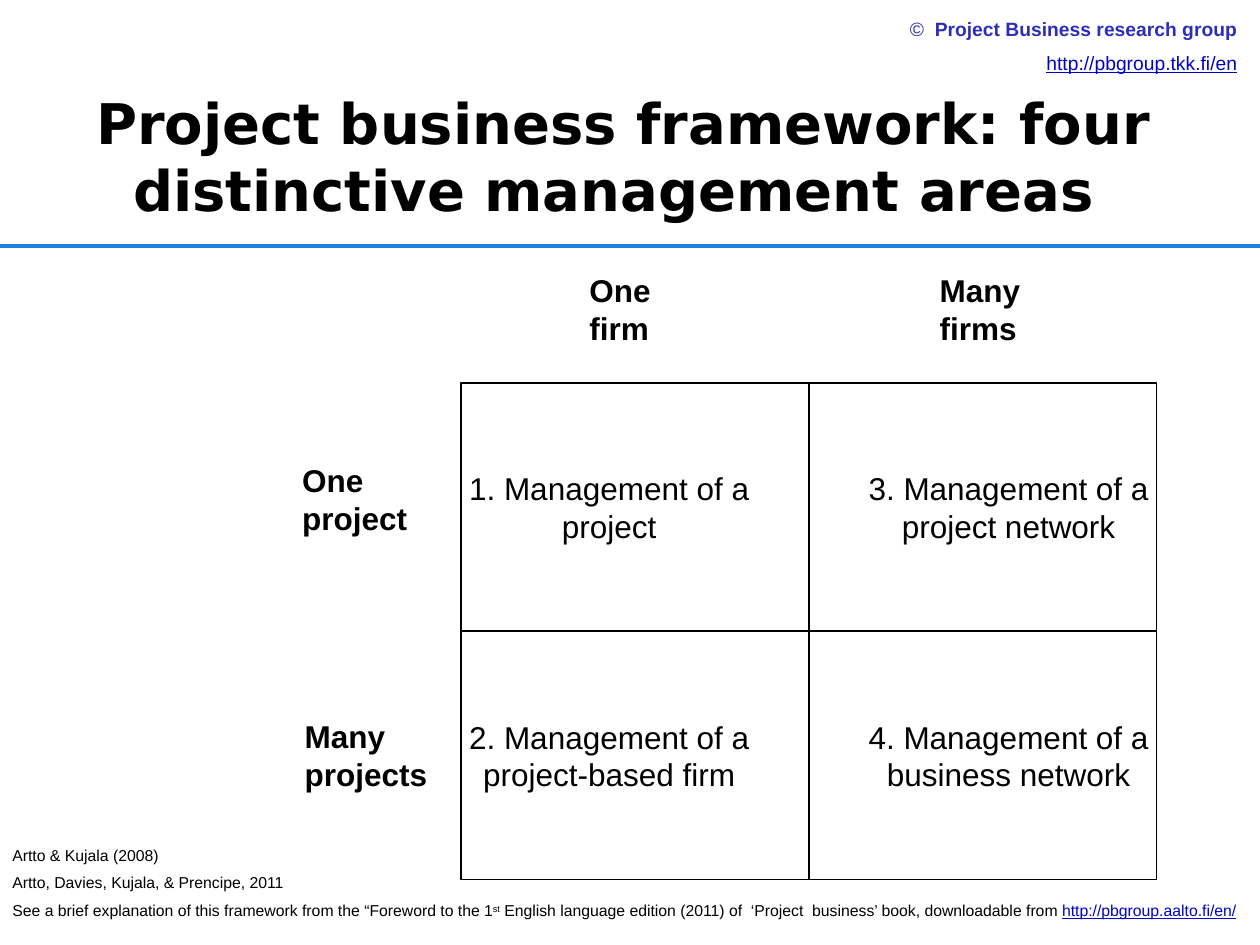
import pptx
import pptx.dml.color
import pptx.enum.shapes
import pptx.enum.text
import pptx.oxml.ns
import pptx.util
from dataclasses import dataclass
from lxml import etree
from typing import Any

Inches = pptx.util.Inches
Pt = pptx.util.Pt
RGB = pptx.dml.color.RGBColor
ALIGN = pptx.enum.text.PP_ALIGN
ANCHOR = pptx.enum.text.MSO_ANCHOR
FIT = pptx.enum.text.MSO_AUTO_SIZE


@dataclass(frozen=True)
class Theme:
    black: RGB = RGB(0x00, 0x00, 0x00)
    rule: RGB = RGB(0x1D, 0x82, 0xDD)
    owner: RGB = RGB(0x2D, 0x2D, 0xB9)
    link: RGB = RGB(0x00, 0x00, 0xCC)
    body_font: str = "Arial"
    title_font: str = "DejaVu Sans"
    title: Pt = Pt(32)
    label: Pt = Pt(18)
    header: Pt = Pt(11)
    source: Pt = Pt(9)


THEME = Theme()


@dataclass(frozen=True)
class Piece:
    text: str
    color: RGB = THEME.black
    bold: bool = False
    underline: bool = False
    superscript: bool = False


@dataclass(frozen=True)
class TextBlock:
    left: float
    top: float
    width: float
    height: float
    paragraphs: list[list[Piece]]
    size: Pt
    font: str = THEME.body_font
    align: Any = ALIGN.LEFT
    anchor: Any = ANCHOR.TOP
    fit: Any = FIT.SHAPE_TO_FIT_TEXT
    gap: float = 0


@dataclass(frozen=True)
class Area:
    column: int
    row: int
    text: str


def set_all(target: Any, values: dict[str, Any]) -> None:
    for name, value in values.items():
        setattr(target, name, value)


def write(frame: Any, block: TextBlock) -> None:
    set_all(frame, {"word_wrap": True, "auto_size": block.fit, "vertical_anchor": block.anchor})
    for index, pieces in enumerate(block.paragraphs):
        paragraph = frame.add_paragraph() if index else frame.paragraphs[0]
        set_all(paragraph, {"alignment": block.align, "space_before": Pt(block.gap if index else 0)})
        for piece in pieces:
            run = paragraph.add_run()
            run.text = piece.text
            set_all(run.font, {"name": block.font, "size": block.size,
                               "bold": piece.bold, "underline": piece.underline})
            run.font.color.rgb = piece.color
            if piece.superscript:
                run.font._element.set("baseline", "30000")


def add_text(slide: Any, block: TextBlock) -> None:
    box = slide.shapes.add_textbox(Inches(block.left), Inches(block.top),
                                   Inches(block.width), Inches(block.height))
    write(box.text_frame, block)


def add_rule(slide: Any, top: float, width: float) -> None:
    rule = slide.shapes.add_connector(pptx.enum.shapes.MSO_CONNECTOR.STRAIGHT,
                                      Inches(0), Inches(top), Inches(width), Inches(top))
    rule.line.color.rgb = THEME.rule
    rule.line.width = Pt(2.25)
    etree.SubElement(rule._element.spPr, pptx.oxml.ns.qn("a:effectLst"))


def add_area(slide: Any, area: Area) -> None:
    width, height = 2.76, 1.97
    block = TextBlock(3.66 + area.column * width, 3.04 + area.row * height, width, height,
                      [[Piece(area.text)]], THEME.label, align=ALIGN.CENTER,
                      anchor=ANCHOR.MIDDLE, fit=FIT.NONE)
    cell = slide.shapes.add_shape(pptx.enum.shapes.MSO_SHAPE.RECTANGLE, Inches(block.left),
                                  Inches(block.top), Inches(width), Inches(height))
    cell.shadow.inherit = False
    cell.fill.background()
    cell.line.color.rgb = THEME.black
    cell.line.width = Pt(1)
    margins = (0.41, 0) if area.column else (0, 0.41)
    set_all(cell.text_frame, {"margin_left": Inches(margins[0]), "margin_right": Inches(margins[1])})
    write(cell.text_frame, block)


def heading(left: float, top: float, width: float, text: str) -> TextBlock:
    return TextBlock(left, top, width, 0.7, [[Piece(text, bold=True)]], THEME.label)


COPYRIGHT = TextBlock(6.8, 0.09, 3.12, 0.56, [
    [Piece("©  ", THEME.owner), Piece("Project Business research group", THEME.owner, bold=True)],
    [Piece("http://pbgroup.tkk.fi/en", THEME.link, underline=True)],
], THEME.header, align=ALIGN.RIGHT, gap=6.2)

TITLE = TextBlock(0.01, 0.68, 9.88, 1.11, [
    [Piece("Project business framework: four distinctive management areas ", bold=True)],
], THEME.title, THEME.title_font, ALIGN.CENTER, ANCHOR.MIDDLE, FIT.NONE)

SOURCES = TextBlock(0, 6.66, 10, 0.71, [
    [Piece("Artto & Kujala (2008)")],
    [Piece("Artto, Davies, Kujala, & Prencipe, 2011")],
    [Piece("See a brief explanation of this framework from the “Foreword to the 1"),
     Piece("st", superscript=True),
     Piece(" English language edition (2011) of  ‘Project  business’ book, downloadable from "),
     Piece("http://pbgroup.aalto.fi/en/", THEME.link, underline=True)],
], THEME.source, gap=5.1)

HEADINGS = [
    heading(2.3, 3.61, 1.25, "One project"),
    heading(2.32, 5.64, 1.34, "Many projects"),
    heading(4.58, 2.1, 1.13, "One firm"),
    heading(7.36, 2.1, 0.97, "Many firms"),
]

AREAS = [
    Area(0, 0, "1. Management of a project"),
    Area(1, 0, "3. Management of a project network"),
    Area(0, 1, "2. Management of a project-based firm"),
    Area(1, 1, "4. Management of a business network"),
]


def main() -> None:
    deck = pptx.Presentation()
    set_all(deck, {"slide_width": Inches(10), "slide_height": Inches(7.5)})
    slide = deck.slides.add_slide(deck.slide_layouts[6])
    add_rule(slide, 1.95, 10)
    for block in [COPYRIGHT, TITLE, SOURCES, *HEADINGS]:
        add_text(slide, block)
    for area in AREAS:
        add_area(slide, area)
    deck.save("out.pptx")


if __name__ == "__main__":
    main()
